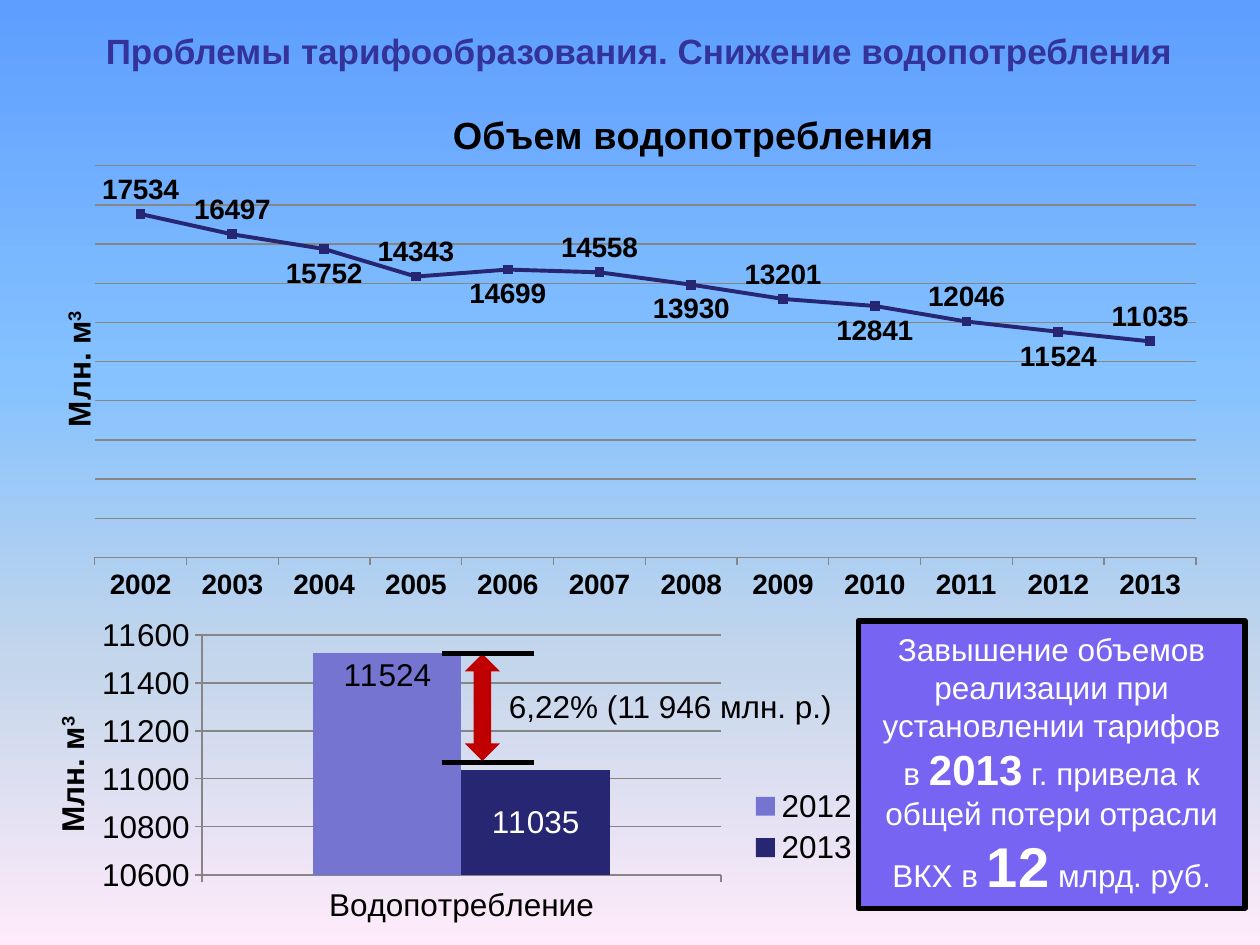
from dataclasses import dataclass

from lxml import etree
from pptx import Presentation
from pptx.chart.data import CategoryChartData
from pptx.dml.color import RGBColor
from pptx.enum.chart import (XL_CHART_TYPE, XL_LABEL_POSITION, XL_LEGEND_POSITION,
                             XL_MARKER_STYLE, XL_TICK_LABEL_POSITION, XL_TICK_MARK)
from pptx.enum.shapes import MSO_CONNECTOR, MSO_SHAPE
from pptx.enum.text import MSO_ANCHOR, PP_ALIGN
from pptx.oxml.ns import qn
from pptx.util import Cm, Pt

ABOVE, BELOW = XL_LABEL_POSITION.ABOVE, XL_LABEL_POSITION.BELOW
CENTER, INSIDE_END = XL_LABEL_POSITION.CENTER, XL_LABEL_POSITION.INSIDE_END
TICK_OUT, TICK_NONE = XL_TICK_MARK.OUTSIDE, XL_TICK_MARK.NONE
SQUARE = XL_MARKER_STYLE.SQUARE
MIDDLE = MSO_ANCHOR.MIDDLE


@dataclass(frozen=True)
class Theme:
    font: str = "Arial"
    heading: str = "333399"
    black: str = "000000"
    white: str = "FFFFFF"
    dark: str = "262673"
    light: str = "7575D1"
    grid: str = "868686"
    arrow: str = "C00000"
    panel: str = "7864F2"
    sky: tuple = ((0, "5E9EFF"), (40, "85C2FF"), (70, "C4D6EB"), (100, "FFEBFA"))
    label_size: float = 16
    body_size: float = 18
    title_size: float = 20
    chart_title_size: float = 21.6
    year_size: float = 24
    sum_size: float = 32


theme = Theme()


def style(font, size, color, bold=False):
    values = {"name": theme.font, "size": Pt(size), "bold": bold}
    for name, value in values.items():
        setattr(font, name, value)
    font.color.rgb = RGBColor.from_string(color)


def place(part, **fractions):
    """Fix a chart part by fractions of the chart's size."""
    is_plot = part.tag == qn("c:plotArea")
    for old in part.findall(qn("c:layout")):
        part.remove(old)
    layout = etree.Element(qn("c:layout"))
    manual = etree.SubElement(layout, qn("c:manualLayout"))
    settings = {"layoutTarget": "inner"} if is_plot else {}
    settings |= {"xMode": "edge", "yMode": "edge"} | fractions
    for name, value in settings.items():
        etree.SubElement(manual, qn(f"c:{name}")).set("val", str(value))
    part.insert(0 if is_plot else 1, layout)


deck = Presentation()
deck.slide_width, deck.slide_height = Cm(25.4), Cm(19.05)
slide = deck.slides.add_slide(deck.slide_layouts[5])
shapes = slide.shapes

# Sky gradient, running downwards
sky = slide.background.fill
sky.gradient()
sky.gradient_angle = 270
stops = slide.element.find(f".//{qn('a:gsLst')}")
for stop in list(stops):
    stops.remove(stop)
for percent, color in theme.sky:
    stop = etree.SubElement(stops, qn("a:gs"), pos=str(percent * 1000))
    etree.SubElement(stop, qn("a:srgbClr"), val=color)

# Heading
title = shapes.title
title.left, title.top, title.width, title.height = Cm(1.47), Cm(0.33), Cm(22.83), Cm(1.37)
title.text_frame.vertical_anchor = MIDDLE
para = title.text_frame.paragraphs[0]
para.alignment = PP_ALIGN.CENTER
span = para.add_run()
span.text = "Проблемы тарифообразования. Снижение водопотребления"
style(span.font, theme.title_size, theme.heading, True)

# Both charts
volumes = [17534, 16497, 15752, 14343, 14699, 14558,
           13930, 13201, 12841, 12046, 11524, 11035]
trend_data = CategoryChartData()
trend_data.categories = [str(year) for year in range(2002, 2014)]
trend_data.add_series("Series 1", volumes)
trend = shapes.add_chart(XL_CHART_TYPE.LINE_MARKERS, Cm(0.71), Cm(1.93),
                         Cm(24), Cm(10.39), trend_data).chart

change_data = CategoryChartData()
change_data.categories = ["Водопотребление"]
change_data.add_series("2012", volumes[-2:-1])
change_data.add_series("2013", volumes[-1:])
change = shapes.add_chart(XL_CHART_TYPE.COLUMN_CLUSTERED, Cm(0.3), Cm(12.32),
                          Cm(17.15), Cm(6.4), change_data).chart

charts = [
    (trend, (0, 20000, 2000), {"x": 0.05, "y": 0.136, "w": 0.925, "h": 0.76},
     {"x": 0.017, "y": 0.41}),
    (change, (10600, 11600, 200), {"x": 0.22, "y": 0.075, "w": 0.61, "h": 0.756},
     {"x": 0.04, "y": 0.32}),
]
for chart, (low, high, step), plot_place, unit_place in charts:
    style(chart.font, theme.body_size, theme.black)
    chart.has_legend = False
    chart.has_title = False
    chart.plots[0].vary_by_categories = False
    place(chart.element.find(f".//{qn('c:plotArea')}"), **plot_place)
    values = chart.value_axis
    values.minimum_scale, values.maximum_scale, values.major_unit = low, high, step
    values.has_major_gridlines = True
    values.major_tick_mark = TICK_OUT
    chart.category_axis.major_tick_mark = TICK_OUT
    for line in (values.major_gridlines.format.line, values.format.line,
                 chart.category_axis.format.line):
        line.color.rgb = RGBColor.from_string(theme.grid)
        line.width = Pt(0.75)
    para = values.axis_title.text_frame.paragraphs[0]
    for text in ("Млн. м", "3"):
        span = para.add_run()
        span.text = text
        style(span.font, theme.body_size, theme.black, True)
    span.font._element.set("baseline", "30000")
    place(values.axis_title._element, **unit_place)

# Yearly trend
trend.has_title = True
span = trend.chart_title.text_frame.paragraphs[0].add_run()
span.text = "Объем водопотребления"
style(span.font, theme.chart_title_size, theme.black, True)
place(trend.chart_title._element, x=0.345, y=0.015)
style(trend.category_axis.tick_labels.font, theme.label_size, theme.black, True)
trend.value_axis.major_tick_mark = TICK_NONE
trend.value_axis.tick_label_position = XL_TICK_LABEL_POSITION.NONE
trend.value_axis.format.line.fill.background()

series = trend.plots[0].series[0]
series.smooth = False
series.format.line.color.rgb = RGBColor.from_string(theme.dark)
series.format.line.width = Pt(2.25)
series.marker.style, series.marker.size = SQUARE, 5
series.marker.format.fill.solid()
series.marker.format.fill.fore_color.rgb = RGBColor.from_string(theme.dark)
series.marker.format.line.color.rgb = RGBColor.from_string(theme.dark)
years_below = (2004, 2006, 2008, 2010, 2012)
for index in range(len(volumes)):
    label = series.points[index].data_label
    style(label.font, theme.label_size, theme.black, True)
    label.position = BELOW if 2002 + index in years_below else ABOVE

# Last two years
change.plots[0].gap_width = 150
change.plots[0].overlap = 0
change.has_legend = True
change.legend.position = XL_LEGEND_POSITION.RIGHT
change.legend.include_in_layout = False
style(change.legend.font, theme.body_size, theme.black)
place(change.legend._element, x=0.855, y=0.54, w=0.145, h=0.28)
looks = [(theme.light, theme.black, INSIDE_END), (theme.dark, theme.white, CENTER)]
for series, (fill, ink, position) in zip(change.plots[0].series, looks):
    series.format.fill.solid()
    series.format.fill.fore_color.rgb = RGBColor.from_string(fill)
    labels = series.data_labels
    labels.show_value = True
    labels.position = position
    style(labels.font, theme.body_size, ink)

# Difference arrow between two bars
arrow = shapes.add_shape(MSO_SHAPE.UP_DOWN_ARROW, Cm(9.37), Cm(13.18), Cm(0.71), Cm(2.16))
arrow.shadow.inherit = False
arrow.fill.solid()
arrow.fill.fore_color.rgb = RGBColor.from_string(theme.arrow)
arrow.line.fill.background()
for level in (15.37, 13.18):
    mark = shapes.add_connector(MSO_CONNECTOR.STRAIGHT, Cm(8.92), Cm(level),
                                Cm(10.77), Cm(level))
    mark.line.color.rgb = RGBColor.from_string(theme.black)
    mark.line.width = Pt(3)
    etree.SubElement(mark._element.spPr, qn("a:effectLst"))

# Difference caption and conclusion panel
caption = shapes.add_textbox(Cm(9.73), Cm(13.72), Cm(7.57), Cm(1.02))
panel = shapes.add_shape(MSO_SHAPE.RECTANGLE, Cm(17.3), Cm(12.52), Cm(7.8), Cm(5.79))
panel.shadow.inherit = False
panel.fill.solid()
panel.fill.fore_color.rgb = RGBColor.from_string(theme.panel)
panel.line.color.rgb = RGBColor.from_string(theme.black)
panel.line.width = Pt(3)
panel.text_frame.vertical_anchor = MIDDLE
conclusion = [
    ("Завышение объемов реализации при установлении тарифов в ", theme.body_size),
    ("2013", theme.year_size),
    (" г. привела к общей потери отрасли ВКХ в ", theme.body_size),
    ("12", theme.sum_size),
    (" млрд. руб.", theme.body_size),
]
texts = [(caption, theme.black, [("6,22% (11 946 млн. р.)", theme.body_size)]),
         (panel, theme.white, conclusion)]
for box, ink, spans in texts:
    box.text_frame.word_wrap = True
    para = box.text_frame.paragraphs[0]
    para.alignment = PP_ALIGN.CENTER
    for text, size in spans:
        span = para.add_run()
        span.text = text
        style(span.font, size, ink, size > theme.body_size)

deck.save("out.pptx")
